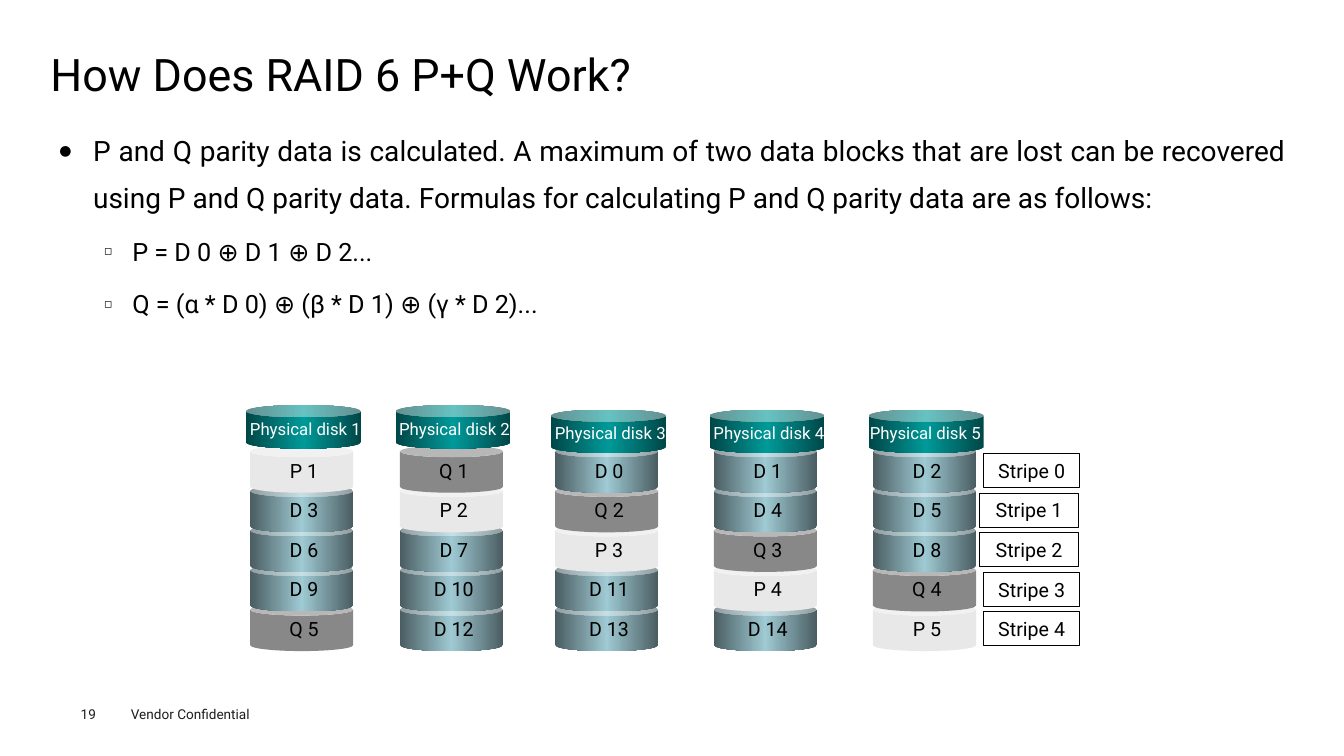
from lxml import etree
from pptx import Presentation
from pptx.dml.color import RGBColor
from pptx.enum.shapes import MSO_SHAPE
from pptx.enum.text import MSO_ANCHOR, PP_ALIGN
from pptx.oxml.ns import qn
from pptx.util import Pt

CAN, RECT = MSO_SHAPE.CAN, MSO_SHAPE.RECTANGLE
LEFT, CENTER, JUSTIFY = PP_ALIGN.LEFT, PP_ALIGN.CENTER, PP_ALIGN.JUSTIFY
TOP, MIDDLE = MSO_ANCHOR.TOP, MSO_ANCHOR.MIDDLE

FONT = "Roboto"
BLACK, WHITE, FOOTER = "000000", "FFFFFF", "1D1D1B"
HEADER_FILL = ("004747", "009999", "004747")
BLOCK_FILLS = {"D": ("4A5D62", "9FCAD3", "4A5D62"), "P": "E8E8E8", "Q": "888888"}

BLOCK_TOP, BLOCK_STEP = 318.2, 28.27
LABEL_TOP = 323.9

# Each disk: block left, header top, header label left and width, blocks
DISKS = [
    (178.7, 289.4, 164.2, 108, ["P 1", "D 3", "D 6", "D 9", "Q 5"]),
    (285.7, 289.4, 275, 99.4, ["Q 1", "P 2", "D 7", "D 10", "D 12"]),
    (396.6, 292.6, 388.1, 95.8, ["D 0", "Q 2", "P 3", "D 11", "D 13"]),
    (509.9, 292.6, 498.2, 102.2, ["D 1", "D 4", "Q 3", "P 4", "D 14"]),
    (623.6, 292.6, 614.2, 93.6, ["D 2", "D 5", "D 8", "Q 4", "P 5"]),
]
STRIPES = [(702.7, 68.4), (699.8, 70.6), (699.8, 70.6), (702.7, 68.4), (702.7, 68.4)]

BODY = [
    ("P and Q parity data is calculated. A maximum of two data blocks that are lost "
     "can be recovered using P and Q parity data. Formulas for calculating P and Q "
     "parity data are as follows:", 0, 20, "●", 24, 24, 0),
    ("P = D 0 ⊕ D 1 ⊕ D 2...", 1, 18, "◻", 52, 20, 7.2),
    ("Q = (α * D 0) ⊕ (β * D 1) ⊕ (γ * D 2)...", 1, 18, "◻", 52, 20, 7.2),
]


def rgb(color):
    return RGBColor.from_string(color)


def style_runs(p, size, color):
    for r in p.runs:
        r.font.name = FONT
        r.font.size = Pt(size)
        r.font.color.rgb = rgb(color)


def set_insets(tf, x, y):
    tf.margin_left = tf.margin_right = Pt(x)
    tf.margin_top = tf.margin_bottom = Pt(y)


def write(sp, text, size, color, align):
    p = sp.text_frame.paragraphs[0]
    p.text = text
    p.alignment = align
    style_runs(p, size, color)
    return p


def add_text(s, box, text, size, color=BLACK, align=CENTER, wrap=True,
             insets=(7.2, 3.6), anchor=TOP):
    sp = s.shapes.add_textbox(*map(Pt, box))
    tf = sp.text_frame
    tf.word_wrap = wrap
    tf.vertical_anchor = anchor
    set_insets(tf, *insets)
    return write(sp, text, size, color, align)


def set_gradient(sp, colors):
    sp.fill.gradient()
    sp.fill.gradient_angle = 0
    stops = sp.fill._xPr.find(".//" + qn("a:gsLst"))
    for gs in list(stops):
        stops.remove(gs)
    for i, color in enumerate(colors):
        pos = i * 100000 // (len(colors) - 1)
        gs = etree.SubElement(stops, qn("a:gs"), pos=str(pos))
        etree.SubElement(gs, qn("a:srgbClr"), val=color)


def add_shape(s, kind, box, fill):
    sp = s.shapes.add_shape(kind, *map(Pt, box))
    sp.shadow.inherit = False
    sp.line.fill.background()
    if isinstance(fill, tuple):
        set_gradient(sp, fill)
    else:
        sp.fill.solid()
        sp.fill.fore_color.rgb = rgb(fill)
    return sp


def add_can(s, box, fill, depth):
    sp = add_shape(s, CAN, box, fill)
    sp.adjustments[0] = depth


def add_disk(s, number, left, header_top, label_left, label_width, blocks):
    for row, block in reversed(list(enumerate(blocks))):
        add_can(s, (left, BLOCK_TOP + row * BLOCK_STEP, 73.6, 33.8),
                BLOCK_FILLS[block[0]], 0.25)
    for row, block in enumerate(blocks):
        add_text(s, (left + 11.5, LABEL_TOP + row * BLOCK_STEP, 54, 24.3), block, 14)
    add_can(s, (left - 3, header_top, 82.1, 31), HEADER_FILL, 0.279)
    add_text(s, (label_left, header_top + 5.8, label_width, 21.8),
             f"Physical disk {number}", 12, WHITE, wrap=False)


def add_stripe(s, number, left, width):
    sp = add_shape(s, RECT, (left, LABEL_TOP + number * BLOCK_STEP, width, 24.3), WHITE)
    sp.line.color.rgb = rgb(BLACK)
    sp.line.width = Pt(0.75)
    write(sp, f"Stripe {number}", 14, BLACK, CENTER)


def add_bullet(p, char, margin, hanging):
    pPr = p._p.get_or_add_pPr()
    pPr.set("marL", str(Pt(margin)))
    pPr.set("indent", str(-Pt(hanging)))
    etree.SubElement(pPr, qn("a:buSzPct"), val="50000")
    etree.SubElement(pPr, qn("a:buFont"), typeface=FONT)
    etree.SubElement(pPr, qn("a:buChar"), char=char)


def add_body(s, items):
    sp = s.shapes.add_textbox(Pt(36), Pt(82.8), Pt(889.2), Pt(383.8))
    tf = sp.text_frame
    tf.word_wrap = True
    set_insets(tf, 6.5, 3)
    for i, (text, level, size, char, margin, hanging, before) in enumerate(items):
        p = tf.add_paragraph() if i else tf.paragraphs[0]
        p.text = text
        p.level = level
        add_bullet(p, char, margin, hanging)
        p.alignment = JUSTIFY
        p.line_spacing = 1.4
        p.space_before = Pt(before)
        style_runs(p, size, BLACK)


def main():
    prs = Presentation()
    prs.slide_width, prs.slide_height = Pt(960), Pt(540)
    s = prs.slides.add_slide(prs.slide_layouts[6])
    add_text(s, (86.4, 500.4, 115.2, 19.4), "Vendor Confidential", 9.7, FOOTER, LEFT)
    add_text(s, (57.6, 504, 39.6, 11.5), "19", 9.7, FOOTER, LEFT, insets=(0, 0))
    title = add_text(s, (36, 35.3, 889.2, 38.9), "How Does RAID 6 P+Q Work?", 32,
                     align=LEFT, insets=(0, 0), anchor=MIDDLE)
    title.line_spacing = 0.9
    add_body(s, BODY)
    for number, disk in enumerate(DISKS, 1):
        add_disk(s, number, *disk)
    for number, stripe in enumerate(STRIPES):
        add_stripe(s, number, *stripe)
    prs.save("out.pptx")


if __name__ == "__main__":
    main()
